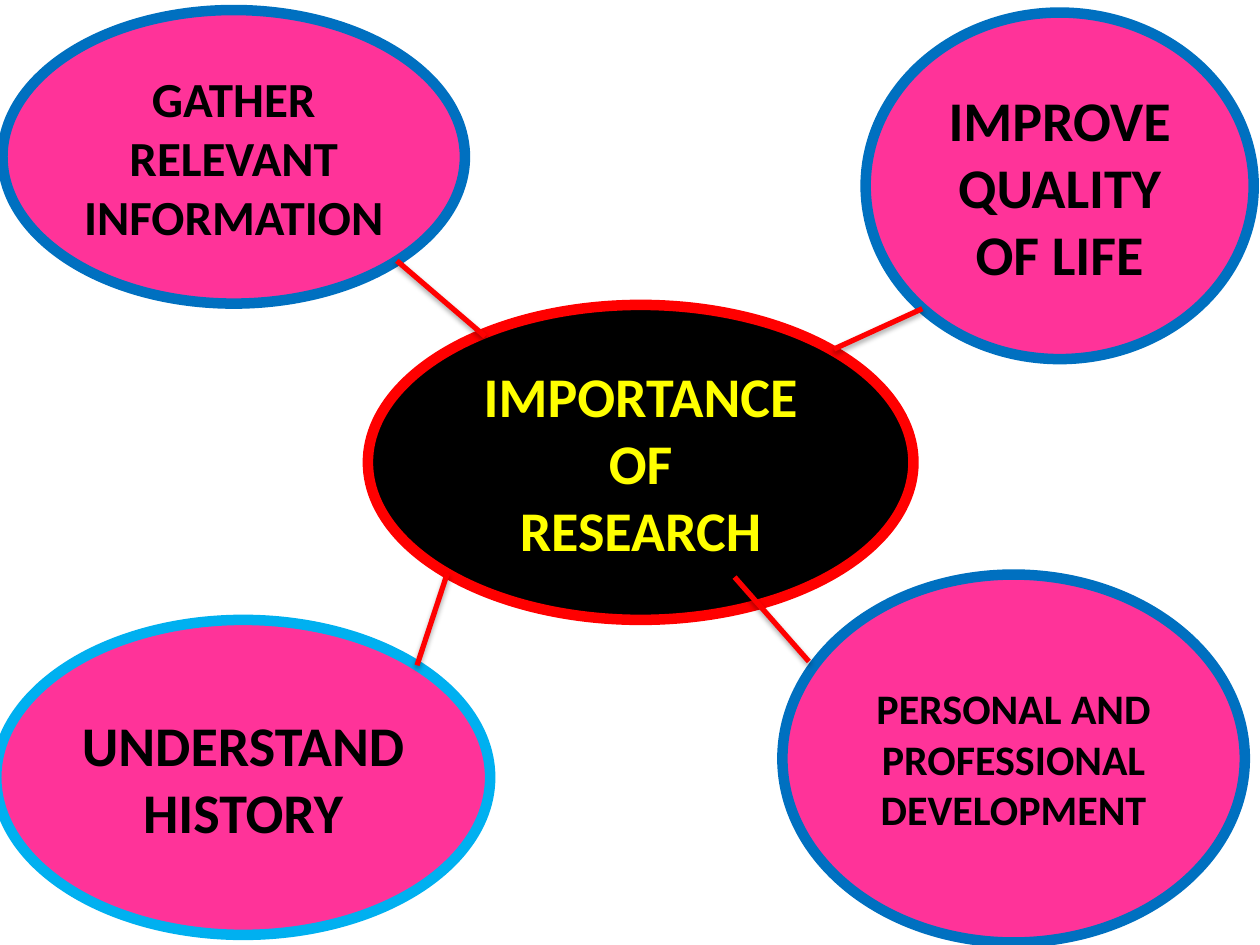
from dataclasses import dataclass

from lxml import etree
from pptx import Presentation
from pptx.dml.color import RGBColor
from pptx.enum import shapes, text
from pptx.oxml.ns import qn
from pptx.util import Inches, Pt


@dataclass(frozen=True)
class Theme:
    font: str = "Calibri"
    black: str = "000000"
    pink: str = "FF3399"
    red: str = "FF0000"
    blue: str = "0070C0"
    sky: str = "00B0F0"
    yellow: str = "FFFF00"
    large: int = 32
    medium: int = 28
    small: int = 24
    rim: int = 6
    link: int = 3


THEME = Theme()

TOPICS = [
    ("GATHER RELEVANT INFORMATION", (0.02, 0.08, 3.67, 2.33), THEME.medium, THEME.blue),
    ("IMPROVE QUALITY OF LIFE", (6.87, 0.1, 3.08, 2.75), THEME.large, THEME.blue),
    ("PERSONAL AND PROFESSIONAL DEVELOPMENT", (6.21, 4.56, 3.67, 2.92), THEME.small, THEME.blue),
    ("UNDERSTAND HISTORY", (-0.03, 4.92, 3.92, 2.5), THEME.large, THEME.sky),
]

LINKS = [
    (3.15, 2.07, 3.85, 2.67),
    (5.83, 4.58, 6.42, 5.25),
    (6.62, 2.77, 7.32, 2.45),
    (3.55, 4.55, 3.31, 5.28),
]


def color(code):
    return RGBColor.from_string(code)


def add_oval(slide, lines, box, size, fill, rim, ink):
    oval = slide.shapes.add_shape(shapes.MSO_SHAPE.OVAL, *map(Inches, box))
    oval.shadow.inherit = False
    oval.fill.solid()
    oval.fill.fore_color.rgb = color(fill)
    oval.line.color.rgb = color(rim)
    oval.line.width = Pt(THEME.rim)
    frame = oval.text_frame
    frame.word_wrap = True
    frame.vertical_anchor = text.MSO_ANCHOR.MIDDLE
    for index, line in enumerate(lines):
        para = frame.add_paragraph() if index else frame.paragraphs[0]
        para.alignment = text.PP_ALIGN.CENTER
        run = para.add_run()
        run.text = line
        run.font.name = THEME.font
        run.font.size = Pt(size)
        run.font.bold = True
        run.font.color.rgb = color(ink)


def add_shadow(link):
    props = link._element.spPr
    effects = etree.SubElement(props, qn("a:effectLst"))
    shadow = etree.SubElement(
        effects, qn("a:outerShdw"),
        blurRad="40000", dist="23000", dir="5400000", rotWithShape="0",
    )
    tint = etree.SubElement(shadow, qn("a:srgbClr"), val=THEME.black)
    etree.SubElement(tint, qn("a:alpha"), val="35000")


def add_link(slide, ends):
    link = slide.shapes.add_connector(shapes.MSO_CONNECTOR.STRAIGHT, *map(Inches, ends))
    link.line.color.rgb = color(THEME.red)
    link.line.width = Pt(THEME.link)
    add_shadow(link)


def main():
    deck = Presentation()
    deck.slide_width, deck.slide_height = Inches(10), Inches(7.5)
    slide = deck.slides.add_slide(deck.slide_layouts[6])
    add_oval(slide, ["IMPORTANCE OF", "RESEARCH"], (2.92, 2.42, 4.33, 2.5),
             THEME.large, THEME.black, THEME.red, THEME.yellow)
    for label, box, size, rim in TOPICS:
        add_oval(slide, [label], box, size, THEME.pink, rim, THEME.black)
    for ends in LINKS:
        add_link(slide, ends)
    deck.save("out.pptx")


if __name__ == "__main__":
    main()
